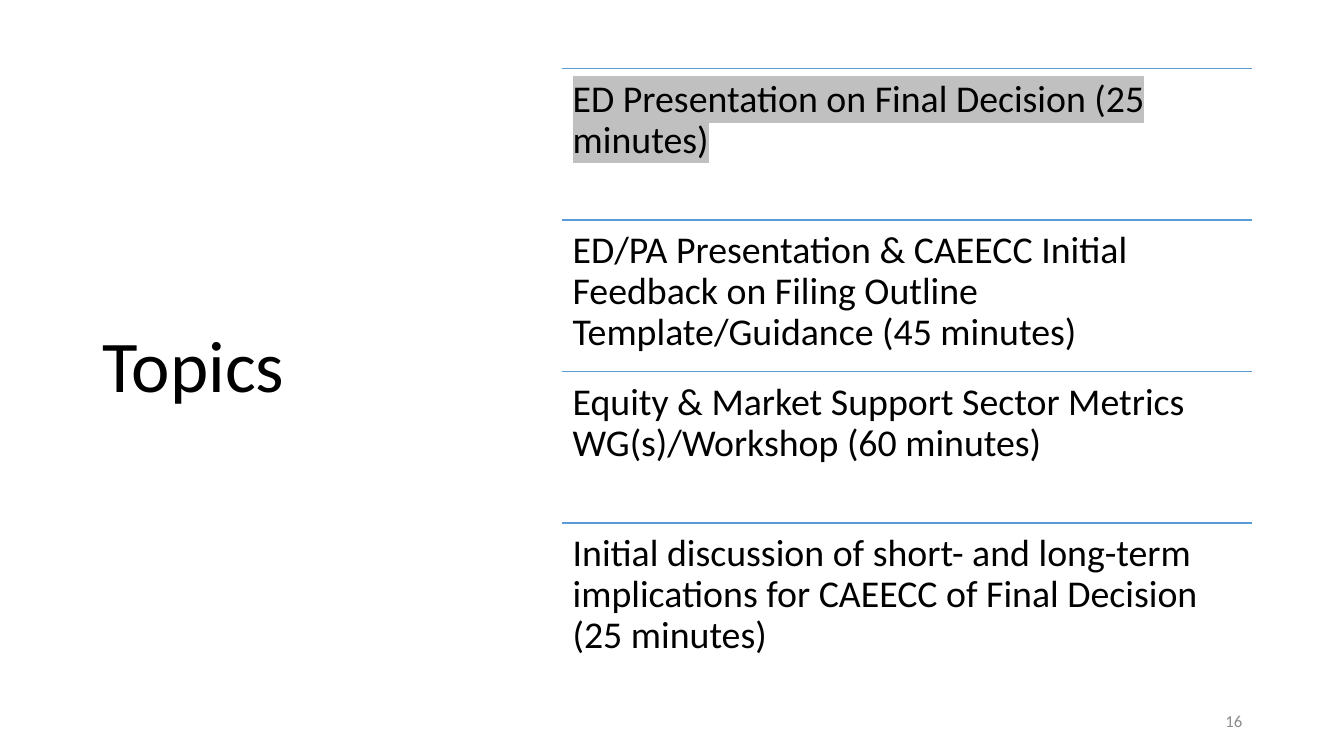
from lxml import etree
from pptx import Presentation
from pptx.dml.color import RGBColor
from pptx.enum.shapes import MSO_CONNECTOR
from pptx.enum.text import MSO_ANCHOR, MSO_AUTO_SIZE, PP_ALIGN
from pptx.oxml.ns import qn
from pptx.util import Inches, Pt

TITLE = "Topics"
TOPICS = [
    "ED Presentation on Final Decision (25 minutes)",
    "ED/PA Presentation & CAEECC Initial Feedback on Filing Outline Template/Guidance (45 minutes)",
    "Equity & Market Support Sector Metrics WG(s)/Workshop (60 minutes)",
    "Initial discussion of short- and long-term implications for CAEECC of Final Decision (25 minutes)",
]
CURRENT_TOPIC = 0
PAGE_NUMBER = "16"

FONT = "Calibri"
BLACK = RGBColor(0x00, 0x00, 0x00)
GRAY = RGBColor(0x8C, 0x8C, 0x8C)
BLUE = RGBColor(0x5B, 0x9B, 0xD5)
HIGHLIGHT = RGBColor(0xC0, 0xC0, 0xC0)

STRAIGHT = MSO_CONNECTOR.STRAIGHT
MIDDLE = MSO_ANCHOR.MIDDLE
TOP = MSO_ANCHOR.TOP
LEFT = PP_ALIGN.LEFT
RIGHT = PP_ALIGN.RIGHT
NO_AUTOFIT = MSO_AUTO_SIZE.NONE

LIST_LEFT, LIST_WIDTH = 5.57, 6.85
FIRST_TOP, LAST_TOP = 0.68, 5.19
ROW_STEP = (LAST_TOP - FIRST_TOP) / (len(TOPICS) - 1)
INSET = 0.11


def write(box, text, size, color, align=LEFT, anchor=TOP, spacing=1.0):
    frame = box.text_frame
    frame.word_wrap = True
    frame.auto_size = NO_AUTOFIT
    frame.vertical_anchor = anchor
    para = frame.paragraphs[0]
    para.text = text
    para.alignment = align
    para.line_spacing = spacing
    para.font.name = FONT
    para.font.size = Pt(size)
    para.font.color.rgb = color
    return frame


def highlight(span, color):
    mark = etree.SubElement(span.font._element, qn("a:highlight"))
    etree.SubElement(mark, qn("a:srgbClr")).set("val", str(color))


def add_topic(page, text, top):
    left, width = Inches(LIST_LEFT), Inches(LIST_WIDTH)
    rule = page.shapes.add_connector(STRAIGHT, left, Inches(top), left + width, Inches(top))
    rule.line.color.rgb = BLUE
    rule.line.width = Pt(1)
    etree.SubElement(rule._element.spPr, qn("a:effectLst"))

    box = page.shapes.add_textbox(left, Inches(top), width, Inches(ROW_STEP))
    frame = write(box, text, 27, BLACK, spacing=0.9)
    frame.margin_left = frame.margin_right = Inches(INSET)
    frame.margin_top = frame.margin_bottom = Inches(INSET)
    return frame.paragraphs[0].runs[0]


def main():
    deck = Presentation()
    deck.slide_width, deck.slide_height = Inches(13.33), Inches(7.5)
    page = deck.slides.add_slide(deck.slide_layouts[5])

    title = page.shapes.title
    title.left, title.top = Inches(0.92), Inches(0.61)
    title.width, title.height = Inches(3.69), Inches(6.09)
    write(title, TITLE, 52, BLACK, anchor=MIDDLE, spacing=0.9)

    for index, topic in enumerate(TOPICS):
        span = add_topic(page, topic, FIRST_TOP + index * ROW_STEP)
        if index == CURRENT_TOPIC:
            highlight(span, HIGHLIGHT)

    number = page.shapes.add_textbox(Inches(9.42), Inches(6.95), Inches(3), Inches(0.4))
    write(number, PAGE_NUMBER, 12, GRAY, align=RIGHT, anchor=MIDDLE)

    deck.save("out.pptx")


if __name__ == "__main__":
    main()
